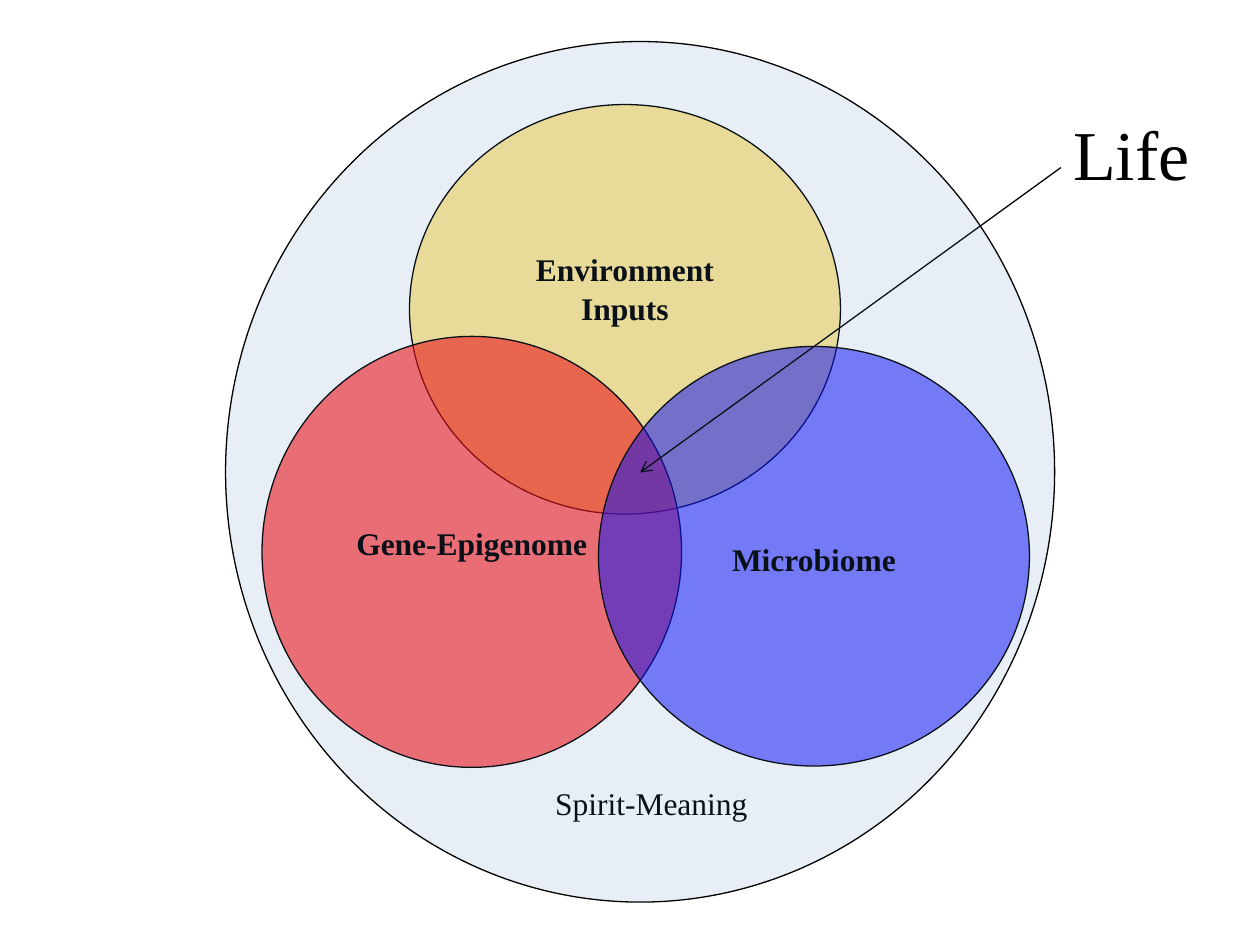
from lxml import etree
from pptx import Presentation
from pptx import util as u
from pptx.dml.color import RGBColor
from pptx.enum import shapes, text
from pptx.oxml import ns

COLORS = {"ink": "000000", "environment": "FFCE13", "gene": "FF0000",
          "microbiome": "0000FF", "spirit": "4F81BD"}
CIRCLES = [
    ((3.25, 0.83, 3.42, 3.25), "environment", 45, ["Environment", "Inputs"], 0.66),
    ((2.08, 2.67, 3.33, 3.42), "gene", 58, ["Gene-Epigenome"], 0.97),
    ((4.75, 2.75, 3.42, 3.33), "microbiome", 52, ["Microbiome"], 1.03),
]


def color(name):
    """Return the named colour."""
    return RGBColor.from_string(COLORS[name])


def inches(values):
    """Turn numbers into inch lengths."""
    return [u.Inches(value) for value in values]


def write(frame, lines, align, **formats):
    """Write one paragraph per line with the given font values."""
    for index, line in enumerate(lines):
        para = frame.paragraphs[0] if index == 0 else frame.add_paragraph()
        para.alignment = align
        span = para.add_run()
        span.text = line
        span.font.color.rgb = color("ink")
        for name, value in {"name": "Times New Roman", **formats}.items():
            setattr(span.font, name, value)


def add_circle(page, box, fill, opacity):
    """Add a translucent outlined ellipse."""
    circle = page.shapes.add_shape(shapes.MSO_SHAPE.OVAL, *inches(box))
    circle.shadow.inherit = False
    circle.fill.solid()
    circle.fill.fore_color.rgb = color(fill)
    tint = circle.fill._xPr.find(".//" + ns.qn("a:srgbClr"))
    etree.SubElement(tint, ns.qn("a:alpha")).set("val", str(opacity * 1000))
    circle.line.color.rgb = color("ink")
    circle.line.width = u.Pt(0.75)
    return circle


def add_labelled_circle(page, box, fill, opacity, lines, drop):
    """Add a circle whose label starts the given drop below its text area's top."""
    frame = add_circle(page, box, fill, opacity).text_frame
    frame.word_wrap = True
    frame.vertical_anchor = text.MSO_ANCHOR.TOP
    frame.margin_top = u.Inches(drop)
    write(frame, lines, text.PP_ALIGN.CENTER, size=u.Pt(18), bold=True)
    for para in frame.paragraphs:
        para.line_spacing = 1.05


def add_label(page, box, words, size, align):
    """Add a wrapped text box with one line."""
    frame = page.shapes.add_textbox(*inches(box)).text_frame
    frame.word_wrap = True
    write(frame, [words], align, size=u.Pt(size))


def add_arrow(page, start, end):
    """Add a thin line with an open arrowhead at its end."""
    arrow = page.shapes.add_connector(
        shapes.MSO_CONNECTOR.STRAIGHT, *inches(start + end))
    arrow.line.color.rgb = color("ink")
    arrow.line.width = u.Pt(0.75)
    etree.SubElement(arrow.line._get_or_add_ln(), ns.qn("a:tailEnd")).set("type", "arrow")
    etree.SubElement(arrow._element.spPr, ns.qn("a:effectLst"))


def main():
    """Build the diagram of life and save it."""
    deck = Presentation()
    deck.slide_width, deck.slide_height = inches((10, 7.5))
    page = deck.slides.add_slide(deck.slide_layouts[6])
    for circle in CIRCLES:
        add_labelled_circle(page, *circle)
    add_arrow(page, (8.42, 1.33), (5.08, 3.75))
    add_label(page, (8.42, 0.83, 1.33, 0.77), "Life", 40, text.PP_ALIGN.LEFT)
    add_label(page, (3.42, 6.17, 3.5, 0.4), "Spirit-Meaning", 18, text.PP_ALIGN.CENTER)
    add_circle(page, (1.79, 0.33, 6.58, 6.83), "spirit", 13)
    deck.save("out.pptx")


if __name__ == "__main__":
    main()
